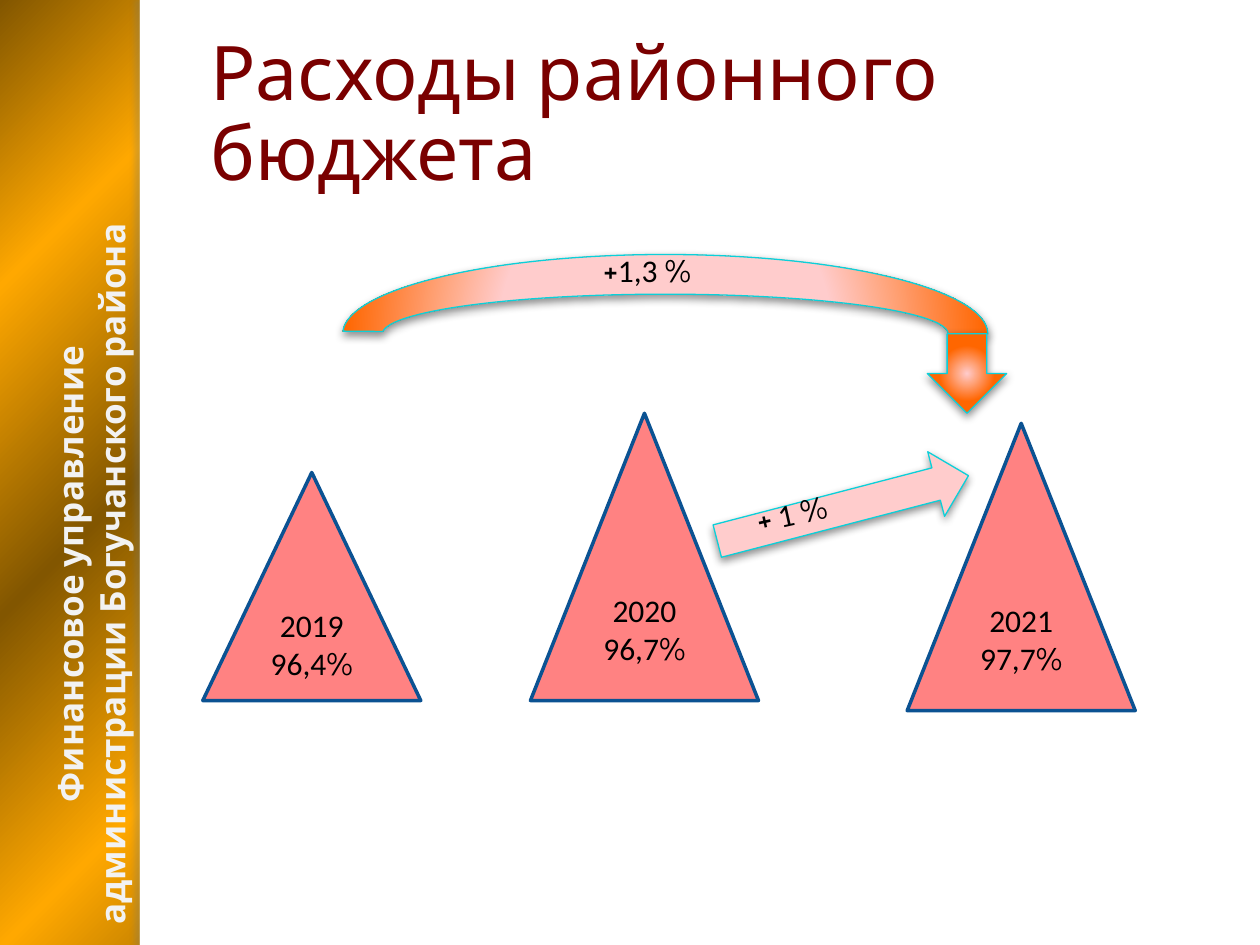
from dataclasses import dataclass

from lxml import etree
from pptx import Presentation
from pptx import util as u
from pptx.dml.color import RGBColor
from pptx.enum import shapes, text
from pptx.oxml.ns import qn


@dataclass(frozen=True)
class Theme:
    heading_font: str = "Cabin"
    number_font: str = "Calibri"
    title_size: int = 43
    side_size: int = 20
    label_size: int = 18
    title: str = "7A0000"
    side: str = "F2F2F2"
    ink: str = "000000"
    paper: str = "FFFFFF"
    strip_shadow: str = "6C7A7C"
    triangle: str = "FF0000"
    triangle_line: str = "0B5292"
    growth: str = "FFCCCC"
    growth_line: str = "0BD0D9"
    orange: str = "FF6600"
    rose: str = "FF9999"
    gold: str = "FFA800"
    bronze: str = "825600"


@dataclass(frozen=True)
class Box:
    left: float
    top: float
    width: float
    height: float
    rotation: float = 0


@dataclass(frozen=True)
class Shadow:
    color: str
    opacity: int
    blur: float
    distance: float
    direction: int


@dataclass(frozen=True)
class Run:
    words: str
    font: str


@dataclass(frozen=True)
class YearShare:
    year: str
    share: str
    box: Box


THEME = Theme()
GROWTH_SHADOW = Shadow(THEME.ink, 43, 5, 2, 90)
STRIP_SHADOW = Shadow(THEME.strip_shadow, 25, 3, 3, 180)
YEARS = [
    YearShare("2019", "96,4", Box(1.61, 3.75, 1.73, 1.81)),
    YearShare("2020", "96,7", Box(4.21, 3.28, 1.81, 2.28)),
    YearShare("2021", "97,7", Box(7.2, 3.36, 1.81, 2.28)),
]


def add_color(parent, color: str, opacity: int = 100) -> None:
    element = etree.SubElement(parent, qn("a:srgbClr"), val=color)
    if opacity < 100:
        etree.SubElement(element, qn("a:alpha"), val=str(opacity * 1000))


def set_gradient(owner, stops: list[tuple[int, str]], angle: int | None = None) -> None:
    gradient = next(owner.iter(qn("a:gradFill")))
    for child in list(gradient):
        gradient.remove(child)
    stop_list = etree.SubElement(gradient, qn("a:gsLst"))
    for position, color in stops:
        stop = etree.SubElement(stop_list, qn("a:gs"), pos=str(position * 1000))
        add_color(stop, color)
    if angle is None:
        radial = etree.SubElement(gradient, qn("a:path"))
        radial.set("path", "circle")
        etree.SubElement(radial, qn("a:fillToRect"), l="50000", t="50000", r="50000", b="50000")
    else:
        etree.SubElement(gradient, qn("a:lin"), ang=str(angle * 60000), scaled="0")


def add_shadow(shape, shadow: Shadow) -> None:
    effects = shape.element.spPr.find(qn("a:effectLst"))
    outer = etree.SubElement(
        effects, qn("a:outerShdw"), blurRad=str(u.Pt(shadow.blur)),
        dist=str(u.Pt(shadow.distance)), dir=str(shadow.direction * 60000),
        algn="ctr", rotWithShape="0")
    add_color(outer, shadow.color, shadow.opacity)


def place(box: Box) -> tuple[u.Length, ...]:
    return tuple(u.Inches(n) for n in (box.left, box.top, box.width, box.height))


def add_figure(canvas, kind, box: Box, fill: str, line: str | None = None,
               line_width: float = 0.75, shadow: Shadow | None = None):
    figure = canvas.add_shape(kind, *place(box))
    figure.rotation = box.rotation
    figure.shadow.inherit = False
    figure.fill.solid()
    figure.fill.fore_color.rgb = RGBColor.from_string(fill)
    if line:
        figure.line.color.rgb = RGBColor.from_string(line)
        figure.line.width = u.Pt(line_width)
    else:
        figure.line.fill.background()
    if shadow:
        add_shadow(figure, shadow)
    return figure


def write_runs(paragraph, runs: list[Run], size: int, color: str, bold: bool = False) -> None:
    for part in runs:
        run = paragraph.add_run()
        run.text = part.words
        run.font.name = part.font
        run.font.size = u.Pt(size)
        run.font.bold = bold
        run.font.color.rgb = RGBColor.from_string(color)


def add_label(canvas, box: Box, runs: list[Run], size: int, color: str, bold: bool = False):
    label = canvas.add_textbox(*place(box))
    label.rotation = box.rotation
    label.text_frame.word_wrap = True
    write_runs(label.text_frame.paragraphs[0], runs, size, color, bold)
    return label


def add_year(canvas, item: YearShare) -> None:
    triangle = add_figure(canvas, shapes.MSO_SHAPE.ISOSCELES_TRIANGLE, item.box,
                          THEME.triangle, THEME.triangle_line, 2)
    color = triangle.element.spPr.find(qn("a:solidFill")).find(qn("a:srgbClr"))
    etree.SubElement(color, qn("a:alpha"), val="49000")
    frame = triangle.text_frame
    frame.word_wrap = True
    frame.vertical_anchor = text.MSO_ANCHOR.MIDDLE
    frame.paragraphs[0].alignment = text.PP_ALIGN.CENTER
    write_runs(frame.paragraphs[0],
               [Run(f"{item.year} {item.share}", THEME.number_font), Run("%", THEME.heading_font)],
               THEME.label_size, THEME.ink)


def add_growth_label(canvas, box: Box, amount: str, unit: str) -> None:
    add_label(canvas, box,
              [Run("+", THEME.heading_font), Run(amount, THEME.number_font),
               Run(unit, THEME.heading_font)], THEME.label_size, THEME.ink)


def add_growth(canvas, kind, box: Box, stops: list[tuple[int, str]] | None = None):
    arrow = add_figure(canvas, kind, box, THEME.growth, THEME.growth_line, shadow=GROWTH_SHADOW)
    if stops:
        arrow.fill.gradient()
        set_gradient(arrow.element, stops)
    return arrow


def main() -> None:
    deck = Presentation()
    deck.slide_width, deck.slide_height = u.Inches(10), u.Inches(7.5)
    slide = deck.slides.add_slide(deck.slide_layouts[6])
    canvas = slide.shapes
    kinds = shapes.MSO_SHAPE

    slide.background.fill.gradient()
    positions = (0, 13, 28, 43, 58, 72, 87, 100)
    set_gradient(slide.element, [(position, (THEME.bronze, THEME.gold)[i % 2])
                                 for i, position in enumerate(positions)], 45)
    add_figure(canvas, kinds.RECTANGLE, Box(1.11, 0, 8.89, 7.5), THEME.paper)
    add_figure(canvas, kinds.RECTANGLE, Box(1.11, 0, 0.08, 7.5), THEME.paper, shadow=STRIP_SHADOW)

    department = add_label(
        canvas, Box(-2.22, 4.17, 5.88, 0.77, 270),
        [Run("Финансовое управление администрации Богучанского района", THEME.heading_font)],
        THEME.side_size, THEME.side, bold=True)
    department.text_frame.paragraphs[0].alignment = text.PP_ALIGN.CENTER

    title = add_label(canvas, Box(1.57, 0.3, 8.2, 1.25),
                      [Run("Расходы районного бюджета", THEME.heading_font)],
                      THEME.title_size, THEME.title)
    title.text_frame.vertical_anchor = text.MSO_ANCHOR.MIDDLE
    title.text_frame.paragraphs[0].line_spacing = 0.88

    for item in YEARS:
        add_year(canvas, item)

    add_growth(canvas, kinds.RIGHT_ARROW, Box(5.66, 3.77, 2.06, 0.53, 345.4))
    add_growth_label(canvas, Box(5.89, 3.77, 1.68, 0.4, 347.3), " 1 ", "%")

    two_year = canvas.add_group_shape().shapes
    arc = add_growth(two_year, kinds.BLOCK_ARC, Box(2.72, 2.02, 5.12, 1.26),
                     [(0, THEME.growth), (50, THEME.growth), (97, THEME.orange), (100, THEME.rose)])
    for i, value in enumerate((108.29, 0, 0.25)):
        arc.adjustments[i] = value
    add_growth(two_year, kinds.DOWN_ARROW, Box(7.36, 2.65, 0.63, 0.63),
               [(0, THEME.growth), (50, THEME.orange), (100, THEME.orange)])
    add_growth_label(canvas, Box(4.69, 1.94, 1.97, 0.4), "1,3", " %")

    deck.save("out.pptx")


if __name__ == "__main__":
    main()
